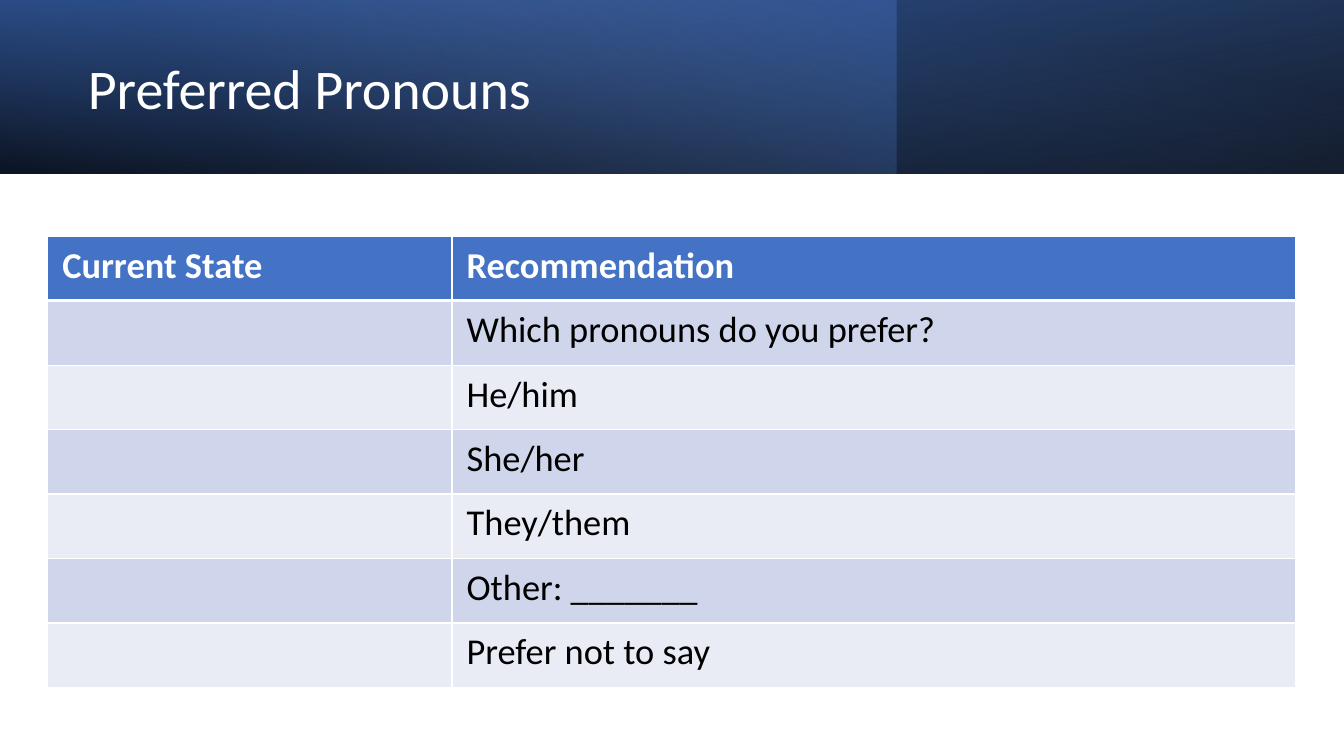
from dataclasses import dataclass
from typing import Any, Optional

import pptx
import pptx.dml.color
import pptx.enum.shapes
import pptx.enum.text
import pptx.oxml
import pptx.oxml.ns
import pptx.util
from pptx.util import Cm


@dataclass(frozen=True)
class Theme:
    font: str = "Calibri"
    white: str = "FFFFFF"
    black: str = "000000"
    accent: str = "4472C4"
    deep: str = "2F5597"
    pale: str = "8FAADC"
    bands: tuple[str, str] = ("CFD5EA", "E9EBF5")
    title_size: int = 40
    table_size: int = 26


@dataclass(frozen=True)
class Stop:
    position: int
    color: str
    alpha: int = 100


@dataclass(frozen=True)
class Wash:
    """A gradient layer of the header band; angle is clockwise degrees."""
    width: float
    angle: int
    stops: tuple[Stop, Stop]
    rotation: int = 0
    mirrored: bool = False


@dataclass(frozen=True)
class Row:
    state: str
    recommendation: str


THEME = Theme()
PAGE_WIDTH = 33.87
PAGE_HEIGHT = 19.05
BAND_HEIGHT = 4.37
COLUMN_WIDTHS = (10.19, 21.26)
TABLE_HEIGHT = 11.38

WASHES = (
    Wash(PAGE_WIDTH, 100, (Stop(0, THEME.black, 96), Stop(100, THEME.deep)), 180, True),
    Wash(22.58, 140, (Stop(0, THEME.accent, 41), Stop(74, THEME.pale, 0))),
    Wash(PAGE_WIDTH, 260, (Stop(0, THEME.black, 63), Stop(78, THEME.accent, 15)), 0, True),
)
ROWS = (
    Row("Current State", "Recommendation"),
    Row("", "Which pronouns do you prefer?"),
    Row("", "He/him"),
    Row("", "She/her"),
    Row("", "They/them"),
    Row("", "Other: _______"),
    Row("", "Prefer not to say"),
)


def rgb(color: str) -> pptx.dml.color.RGBColor:
    return pptx.dml.color.RGBColor.from_string(color)


def apply(target: Any, values: dict[str, Any]) -> None:
    for name, value in values.items():
        setattr(target, name, value)


def write(para: Any, text: str, size: int, color: str, bold: bool = False) -> None:
    span = para.add_run()
    span.text = text
    apply(span.font, {"name": THEME.font, "size": pptx.util.Pt(size), "bold": bold})
    span.font.color.rgb = rgb(color)


def xml(markup: str) -> Any:
    """Parse markup whose first tag still lacks the drawing namespace."""
    head, tail = markup.split(">", 1)
    return pptx.oxml.parse_xml(f"{head} {pptx.oxml.ns.nsdecls('a')}>{tail}")


def draw_wash(page: Any, wash: Wash) -> None:
    box = page.shapes.add_shape(pptx.enum.shapes.MSO_SHAPE.RECTANGLE,
                                0, 0, Cm(wash.width), Cm(BAND_HEIGHT))
    box.shadow.inherit = False
    box.rotation = wash.rotation
    box.line.fill.background()
    properties = box.element.spPr
    if wash.mirrored:
        properties.find(pptx.oxml.ns.qn("a:xfrm")).set("flipH", "1")
    stops = "".join(
        f'<a:gs pos="{stop.position * 1000}"><a:srgbClr val="{stop.color}">'
        f'<a:alpha val="{stop.alpha * 1000}"/></a:srgbClr></a:gs>'
        for stop in wash.stops)
    gradient = xml(f'<a:gradFill><a:gsLst>{stops}</a:gsLst>'
                   f'<a:lin ang="{wash.angle * 60000}" scaled="0"/></a:gradFill>')
    properties.find(pptx.oxml.ns.qn("a:prstGeom")).addnext(gradient)


def draw_title(page: Any, text: str) -> None:
    title = page.shapes.title
    title.element.getparent().append(title.element)  # in front of the header band
    apply(title, {"left": Cm(1.96), "top": Cm(0.69), "width": Cm(19.61), "height": Cm(3.23)})
    apply(title.text_frame, {
        "word_wrap": True,
        "auto_size": pptx.enum.text.MSO_AUTO_SIZE.NONE,
        "vertical_anchor": pptx.enum.text.MSO_ANCHOR.MIDDLE,
    })
    para = title.text_frame.paragraphs[0]
    apply(para, {"alignment": pptx.enum.text.PP_ALIGN.LEFT, "line_spacing": 0.9})
    write(para, text, THEME.title_size, THEME.white)


def draw_borders(cell: Any, bottom_points: int) -> None:
    properties = cell._tc.get_or_add_tcPr()
    for side, points in {"L": 1, "R": 1, "T": 1, "B": bottom_points}.items():
        properties.append(xml(
            f'<a:ln{side} w="{pptx.util.Pt(points)}"><a:solidFill>'
            f'<a:srgbClr val="{THEME.white}"/></a:solidFill></a:ln{side}>'))


def draw_table(page: Any, rows: tuple[Row, ...]) -> None:
    table = page.shapes.add_table(len(rows), len(COLUMN_WIDTHS), Cm(1.2), Cm(5.95),
                                  Cm(sum(COLUMN_WIDTHS)), Cm(TABLE_HEIGHT)).table
    for column, width in zip(table.columns, COLUMN_WIDTHS):
        column.width = Cm(width)
    for index, row in enumerate(rows):
        header = index == 0
        fill = THEME.accent if header else THEME.bands[(index - 1) % 2]
        for cell, text in zip(table.rows[index].cells, (row.state, row.recommendation)):
            apply(cell, {"margin_left": Cm(0.37), "margin_right": Cm(0.37),
                         "margin_top": Cm(0.18), "margin_bottom": Cm(0.18)})
            draw_borders(cell, 3 if header else 1)
            cell.fill.solid()
            cell.fill.fore_color.rgb = rgb(fill)
            if text:
                write(cell.text_frame.paragraphs[0], text, THEME.table_size,
                      THEME.white if header else THEME.black, header)


def row_above_border(index: int) -> Optional[int]:
    return index - 1 if index else None


def main() -> None:
    deck = pptx.Presentation()
    apply(deck, {"slide_width": Cm(PAGE_WIDTH), "slide_height": Cm(PAGE_HEIGHT)})
    page = deck.slides.add_slide(deck.slide_layouts[5])
    for wash in WASHES:
        draw_wash(page, wash)
    draw_title(page, "Preferred Pronouns")
    draw_table(page, ROWS)
    deck.save("out.pptx")


if __name__ == "__main__":
    main()
